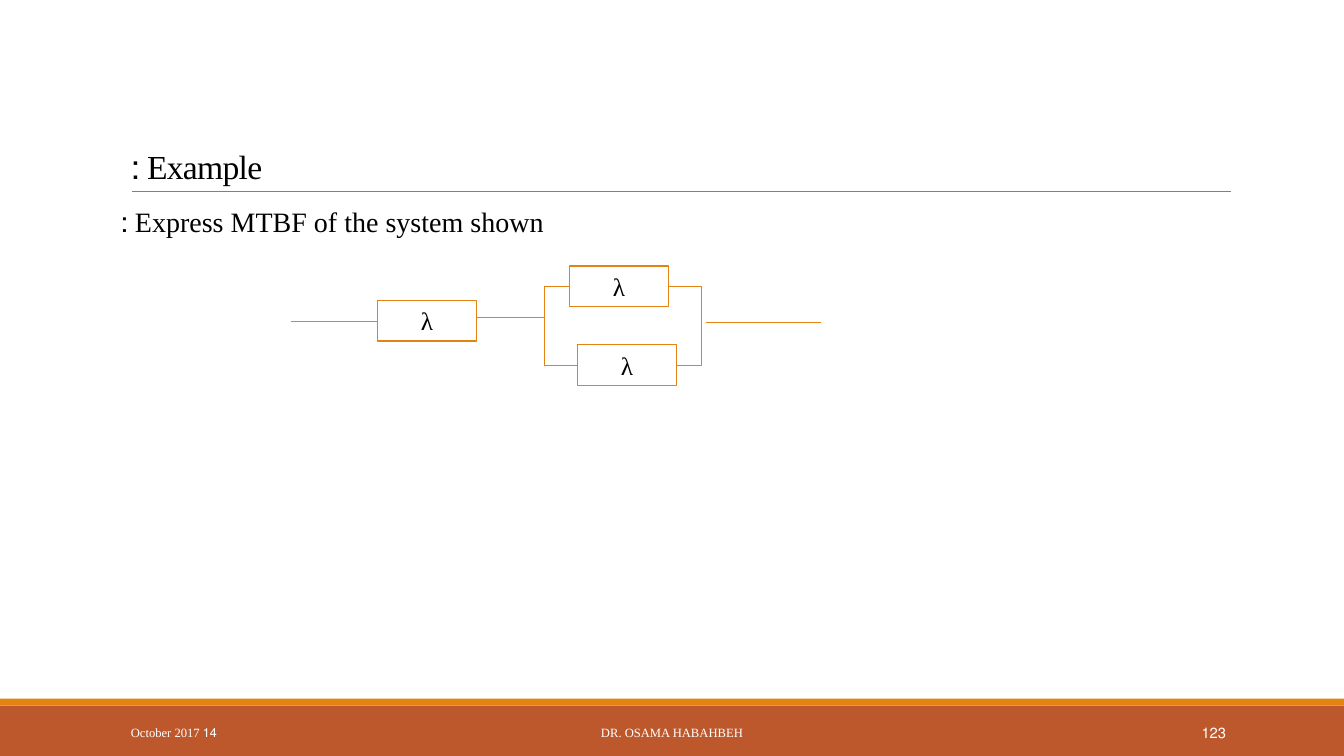
from dataclasses import dataclass

from pptx import Presentation
from pptx.dml.color import RGBColor
from pptx.enum.shapes import MSO_CONNECTOR, MSO_SHAPE
from pptx.enum.text import MSO_ANCHOR, MSO_AUTO_SIZE, PP_ALIGN
from pptx.oxml.ns import qn
from pptx.util import Pt

LEFT, MID, RIGHT = PP_ALIGN.LEFT, PP_ALIGN.CENTER, PP_ALIGN.RIGHT
TOP, CENTER, BASE = MSO_ANCHOR.TOP, MSO_ANCHOR.MIDDLE, MSO_ANCHOR.BOTTOM
FIT = MSO_AUTO_SIZE.SHAPE_TO_FIT_TEXT
RECT = MSO_SHAPE.RECTANGLE
LINE, ELBOW = MSO_CONNECTOR.STRAIGHT, MSO_CONNECTOR.ELBOW


@dataclass(frozen=True)
class Theme:
    font: str = "Times New Roman"
    ink: str = "000000"
    pale: str = "FFFFFF"
    rust: str = "BD582C"
    orange: str = "E48312"
    gray: str = "808080"
    head: float = 24
    body: float = 20
    block: float = 18
    page: float = 10.5
    foot: float = 9


@dataclass(frozen=True)
class Band:
    top: float
    height: float
    color: str


@dataclass(frozen=True)
class Note:
    text: str
    left: float
    width: float
    size: float
    align: PP_ALIGN


@dataclass(frozen=True)
class Block:
    left: float
    top: float


@dataclass(frozen=True)
class Wire:
    start: float
    end: float
    y: float
    color: str
    weight: float = 1


@dataclass(frozen=True)
class Branch:
    site: int
    bend: int


THEME = Theme()
WIDE, HIGH = 960, 540
BOX_W, BOX_H = 70.6, 29
EDGE, SPAN = 86.4, 792

BANDS = [Band(504, 36, THEME.rust), Band(499, 5, THEME.orange)]
NOTES = [
    Note("14 October 2017", EDGE, 194.4, THEME.foot, LEFT),
    Note("DR. OSAMA HABAHBEH", 290.2, 379.4, THEME.foot, MID),
    Note("123", 779.8, 103, THEME.page, RIGHT),
]
BLOCKS = [Block(406.8, 190), Block(412.6, 246.4), Block(269.6, 214.6)]
WIRES = [
    Wire(94.3, 879, 136.8, THEME.gray, 0.5),
    Wire(340.2, 389, 226.8, THEME.orange),
    Wire(269.6, 208, 229.7, THEME.orange),
    Wire(504, 586.6, 230.4, THEME.orange),
]
# Sites 1 and 3 are a block's left and right sides
BRANCHES = [Branch(1, -310000), Branch(3, 410000)]


def put_text(shape, text: str, size: float, color: str, align: PP_ALIGN,
             anchor: MSO_ANCHOR, rtl: bool = True):
    """Fill a shape with one run and return its paragraph and run."""
    frame = shape.text_frame
    frame.word_wrap = True
    frame.vertical_anchor = anchor
    para = frame.paragraphs[0]
    para.alignment = align
    if rtl:
        para._p.get_or_add_pPr().set("rtl", "1")
    run = para.add_run()
    run.text = text
    run.font.name = THEME.font
    run.font.size = Pt(size)
    run.font.color.rgb = RGBColor.from_string(color)
    return para, run


def add_band(slide, band: Band) -> None:
    shape = slide.shapes.add_shape(RECT, 0, Pt(band.top), Pt(WIDE), Pt(band.height))
    shape.shadow.inherit = False
    shape.fill.solid()
    shape.fill.fore_color.rgb = RGBColor.from_string(band.color)
    shape.line.fill.background()


def add_note(slide, note: Note) -> None:
    box = slide.shapes.add_textbox(Pt(note.left), Pt(508.6), Pt(note.width), Pt(28.8))
    put_text(box, note.text, note.size, THEME.pale, note.align, CENTER)


def add_block(slide, block: Block):
    shape = slide.shapes.add_shape(RECT, Pt(block.left), Pt(block.top),
                                   Pt(BOX_W), Pt(BOX_H))
    shape.shadow.inherit = False
    shape.fill.background()
    shape.line.color.rgb = RGBColor.from_string(THEME.orange)
    shape.line.width = Pt(0.75)
    put_text(shape, "λ", THEME.block, THEME.ink, MID, TOP, rtl=False)
    shape.text_frame.auto_size = FIT
    return shape


def style_line(line, color: str, weight: float) -> None:
    line.line.color.rgb = RGBColor.from_string(color)
    line.line.width = Pt(weight)
    props = line._element.spPr
    props.append(props.makeelement(qn("a:effectLst"), {}))


def add_wire(slide, wire: Wire) -> None:
    line = slide.shapes.add_connector(LINE, Pt(wire.start), Pt(wire.y),
                                      Pt(wire.end), Pt(wire.y))
    style_line(line, wire.color, wire.weight)


def add_branch(slide, upper, lower, branch: Branch) -> None:
    line = slide.shapes.add_connector(ELBOW, 0, 0, 0, 0)
    line.begin_connect(upper, branch.site)
    line.end_connect(lower, branch.site)
    style_line(line, THEME.orange, 1)
    # The bend lies outside the blocks, as a share of the width
    guides = line._element.spPr.find(qn("a:prstGeom")).get_or_add_avLst()
    guides.append(guides.makeelement(
        qn("a:gd"), {"name": "adj1", "fmla": f"val {branch.bend}"}))


def main() -> None:
    deck = Presentation()
    deck.slide_width, deck.slide_height = Pt(WIDE), Pt(HIGH)
    slide = deck.slides.add_slide(deck.slide_layouts[5])

    # Title
    title = slide.shapes.title
    title.left, title.top = Pt(EDGE), Pt(22.3)
    title.width, title.height = Pt(SPAN), Pt(114.5)
    para, run = put_text(title, "Example :", THEME.head, THEME.ink, LEFT, BASE)
    para.line_spacing = 0.85
    run.font._element.set("spc", "-50")

    # Question
    body = slide.shapes.add_textbox(Pt(EDGE), Pt(145.4), Pt(SPAN), Pt(316.8))
    para, run = put_text(body, "Express MTBF of the system shown :",
                         THEME.body, THEME.ink, LEFT, TOP)
    body.text_frame.margin_left = body.text_frame.margin_right = 0
    para.line_spacing = 0.9
    para.space_before, para.space_after = Pt(12), Pt(2)

    # Footer
    for band in BANDS:
        add_band(slide, band)
    for note in NOTES:
        add_note(slide, note)

    # Block diagram and title rule
    upper, lower, first = [add_block(slide, block) for block in BLOCKS]
    for branch in BRANCHES:
        add_branch(slide, upper, lower, branch)
    for wire in WIRES:
        add_wire(slide, wire)

    deck.save("out.pptx")


if __name__ == "__main__":
    main()
